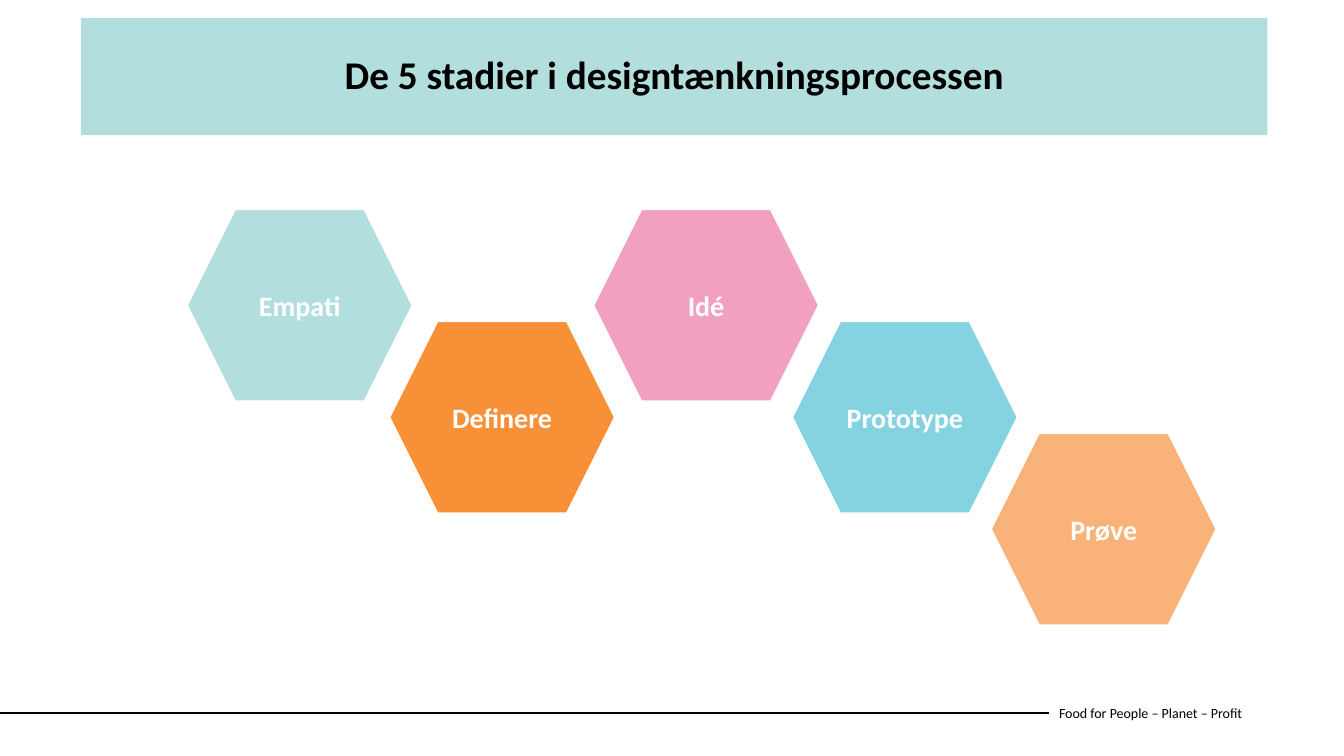
import pptx
import pptx.util
import pptx.dml.color
import pptx.enum.shapes
import pptx.enum.text
import pptx.oxml.ns
import lxml.etree

Cm = pptx.util.Cm
Pt = pptx.util.Pt
RGBColor = pptx.dml.color.RGBColor
Shape = pptx.enum.shapes.MSO_SHAPE
Align = pptx.enum.text.PP_ALIGN

BLACK = RGBColor(0x00, 0x00, 0x00)
WHITE = RGBColor(0xFF, 0xFF, 0xFF)
MINT = RGBColor(0xB2, 0xDE, 0xDD)
ORANGE = RGBColor(0xF7, 0x90, 0x37)
PINK = RGBColor(0xF1, 0xA0, 0xC2)
BLUE = RGBColor(0x85, 0xD2, 0xE1)
PEACH = RGBColor(0xF9, 0xB2, 0x77)


def write_text(shape, text, size=20, color=WHITE, bold=True, align=Align.CENTER):
    frame = shape.text_frame
    frame.word_wrap = True
    frame.vertical_anchor = pptx.enum.text.MSO_ANCHOR.MIDDLE
    paragraph = frame.paragraphs[0]
    paragraph.alignment = align
    run = paragraph.add_run()
    run.text = text
    run.font.name = "Calibri"
    run.font.size = Pt(size)
    run.font.bold = bold
    run.font.color.rgb = color
    return paragraph


def add_filled_shape(kind, left, top, width, height, fill):
    shape = slide.shapes.add_shape(kind, Cm(left), Cm(top), Cm(width), Cm(height))
    shape.shadow.inherit = False
    shape.fill.solid()
    shape.fill.fore_color.rgb = fill
    return shape


presentation = pptx.Presentation()
presentation.slide_width = Cm(33.87)
presentation.slide_height = Cm(19.05)
slide = presentation.slides.add_slide(presentation.slide_layouts[6])

# Footer text with the rule leading up to it
footer = slide.shapes.add_textbox(Cm(26.44), Cm(17.45), Cm(6.93), Cm(1.02))
write_text(footer, "Food for People – Planet – Profit", size=10, color=BLACK,
           bold=False, align=Align.LEFT)
rule = slide.shapes.add_connector(
    pptx.enum.shapes.MSO_CONNECTOR.STRAIGHT, Cm(0), Cm(17.96), Cm(26.44), Cm(17.96))
rule.end_connect(footer, 1)
rule.line.color.rgb = BLACK
rule.line.width = Pt(1.5)
lxml.etree.SubElement(rule.element.spPr, pptx.oxml.ns.qn("a:effectLst"))

# Title band
band = add_filled_shape(Shape.RECTANGLE, 2.04, 0.46, 29.9, 2.95, MINT)
band.line.fill.background()
title = write_text(band, "De 5 stadier i designtænkningsprocessen", size=28, color=BLACK)
title.line_spacing = 0.9
title.space_before = Pt(10)

# Stages: name, left edge, row, colour
FIRST_ROW = 5.28
ROW_STEP = 2.82
stages = [
    ("Empati", 4.72, 0, MINT),
    ("Definere", 9.82, 1, ORANGE),
    ("Idé", 14.96, 0, PINK),
    ("Prototype", 19.97, 1, BLUE),
    ("Prøve", 24.98, 2, PEACH),
]
for name, left, row, color in stages:
    hexagon = add_filled_shape(
        Shape.HEXAGON, left, FIRST_ROW + row * ROW_STEP, 5.67, 4.83, color)
    hexagon.line.color.rgb = WHITE
    hexagon.line.width = Pt(1)
    write_text(hexagon, name)

presentation.save("out.pptx")
